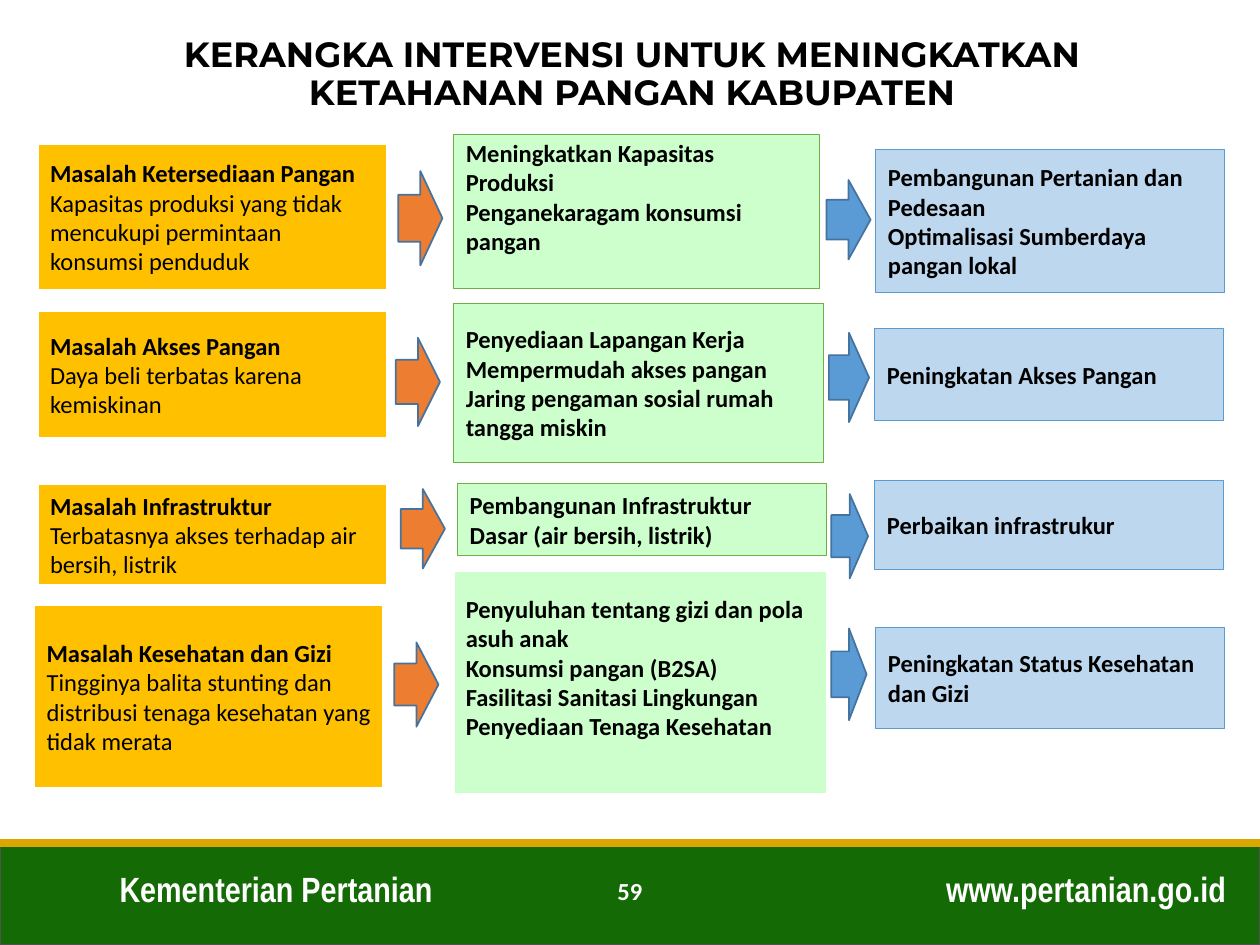
from pptx import Presentation
from pptx.dml.color import RGBColor
from pptx.enum.shapes import MSO_CONNECTOR as Connector, MSO_SHAPE as Shape
from pptx.enum.text import MSO_ANCHOR as Anchor, PP_ALIGN as Align
from pptx.oxml.ns import qn
from pptx.util import Cm, Pt
from lxml.etree import SubElement

THEME = {
    "problem": {"fill": "FFC000", "line": "FFFFFF", "width": 1.5},
    "action": {"fill": "CCFFCC", "line": "70AD47", "width": 0.5},
    "action_plain": {"fill": "CCFFCC", "line": "FFFFFF", "width": 1.5},
    "outcome": {"fill": "BDD7EE", "line": "5B9BD5", "width": 0.5},
    "to_action": {"fill": "ED7D31", "line": "43739E", "width": 1},
    "to_outcome": {"fill": "5B9BD5", "line": "43739E", "width": 1},
    "footer": {"fill": "146B05", "line": "525252", "width": 1},
    "rule": {"line": "DAA600", "width": 4.5},
    "title_text": {"name": "Montserrat", "size": Pt(20), "color": "000000"},
    "body_text": {"name": "Calibri", "size": Pt(14), "color": "000000"},
    "brand_text": {"name": "Arial Narrow", "size": Pt(20), "color": "FFFFFF"},
    "number_text": {"name": "Calibri", "size": Pt(14), "color": "FFFFFF"},
}

PAGE_WIDTH, PAGE_HEIGHT, FOOTER_TOP = 25.4, 19.05, 17

PROBLEMS = [
    ((0.76, 2.9, 7.04, 2.95), "Masalah Ketersediaan Pangan",
     "Kapasitas produksi yang tidak mencukupi permintaan konsumsi penduduk"),
    ((0.76, 6.27, 7.04, 2.57), "Masalah Akses Pangan",
     "Daya beli terbatas karena kemiskinan"),
    ((0.76, 9.75, 7.04, 2.06), "Masalah Infrastruktur",
     "Terbatasnya akses terhadap air bersih, listrik"),
    ((0.69, 12.19, 7.04, 3.71), "Masalah Kesehatan dan Gizi",
     "Tingginya balita stunting dan distribusi tenaga kesehatan yang tidak merata"),
]

ACTIONS = [
    ("action", (9.14, 2.72, 7.39, 3.1), {"vertical_anchor": Anchor.TOP, "margin_top": Cm(0.06)},
     ["Meningkatkan Kapasitas Produksi", "Penganekaragam konsumsi pangan"]),
    ("action", (9.14, 6.12, 7.47, 3.2), {},
     ["Penyediaan Lapangan Kerja", "Mempermudah akses pangan",
      "Jaring pengaman sosial rumah tangga miskin"]),
    ("action", (9.22, 9.75, 7.44, 1.45), {},
     ["Pembangunan Infrastruktur Dasar (air bersih, listrik)"]),
    ("action_plain", (9.14, 11.51, 7.54, 4.5),
     {"vertical_anchor": Anchor.TOP, "margin_top": Cm(0.46)},
     ["Penyuluhan tentang gizi dan pola asuh anak", "Konsumsi pangan (B2SA)",
      "Fasilitasi Sanitasi Lingkungan", "Penyediaan Tenaga Kesehatan"]),
]

OUTCOMES = [
    ((17.65, 3.02, 7.04, 2.87),
     ["Pembangunan Pertanian dan Pedesaan", "Optimalisasi Sumberdaya pangan lokal"]),
    ((17.63, 6.63, 7.04, 1.85), ["Peningkatan Akses Pangan"]),
    ((17.63, 9.68, 7.04, 1.8), ["Perbaikan infrastrukur"]),
    ((17.65, 12.65, 7.04, 2.03), ["Peningkatan Status Kesehatan dan Gizi"]),
]

ARROWS = {
    "to_action": [(8.03, 3.45, 0.89, 1.9), (7.98, 6.81, 0.89, 1.78),
                  (8.08, 9.86, 0.89, 1.6), (7.95, 12.95, 0.89, 1.7)],
    "to_outcome": [(16.66, 3.63, 0.89, 1.6), (16.71, 6.71, 0.81, 1.8),
                   (16.76, 9.96, 0.74, 1.7), (16.76, 12.67, 0.71, 1.85)],
}

LABELS = [
    ("title_text", (1.19, 0.33, 23.11, 2.36), Anchor.MIDDLE,
     {"alignment": Align.CENTER, "line_spacing": 0.9},
     "KERANGKA INTERVENSI UNTUK MENINGKATKAN KETAHANAN PANGAN KABUPATEN"),
    ("brand_text", (2.16, 17.37, 9.3, 1.12), Anchor.TOP,
     {"alignment": Align.LEFT}, "Kementerian Pertanian"),
    ("brand_text", (17.91, 17.37, 7.06, 1.12), Anchor.TOP,
     {"alignment": Align.RIGHT}, "www.pertanian.go.id"),
    ("number_text", (11.33, 17.53, 2.74, 1.02), Anchor.TOP,
     {"alignment": Align.CENTER}, "59"),
]


def apply(target, values):
    for name, value in values.items():
        setattr(target, name, value)


def lengths(place):
    return [Cm(value) for value in place]


def style_line(line, style):
    line.color.rgb = RGBColor.from_string(style["line"])
    line.width = Pt(style["width"])


def add_block(page, kind, style_name, place):
    style = THEME[style_name]
    box = page.shapes.add_shape(kind, *lengths(place))
    box.shadow.inherit = False
    box.fill.solid()
    box.fill.fore_color.rgb = RGBColor.from_string(style["fill"])
    style_line(box.line, style)
    return box


def write(box, lines, text_style, frame_format, para_format):
    frame = box.text_frame
    apply(frame, {"word_wrap": True, "vertical_anchor": Anchor.MIDDLE, **frame_format})
    font_format = dict(THEME[text_style])
    color = RGBColor.from_string(font_format.pop("color"))
    for index, (text, bold) in enumerate(lines):
        para = frame.add_paragraph() if index else frame.paragraphs[0]
        apply(para, {"alignment": Align.LEFT, **para_format})
        span = para.add_run()
        span.text = text
        apply(span.font, {**font_format, "bold": bold})
        span.font.color.rgb = color


def add_card(page, style_name, place, lines, frame_format):
    box = add_block(page, Shape.RECTANGLE, style_name, place)
    write(box, lines, "body_text", frame_format, {})


def add_footer(page):
    add_block(page, Shape.RECTANGLE, "footer",
              (0, FOOTER_TOP, PAGE_WIDTH, PAGE_HEIGHT - FOOTER_TOP))
    rule = page.shapes.add_connector(
        Connector.STRAIGHT, *lengths((0, FOOTER_TOP, PAGE_WIDTH, FOOTER_TOP)))
    style_line(rule.line, THEME["rule"])
    SubElement(rule.element.spPr, qn("a:effectLst"))


def main():
    deck = Presentation()
    apply(deck, {"slide_width": Cm(PAGE_WIDTH), "slide_height": Cm(PAGE_HEIGHT)})
    page = deck.slides.add_slide(deck.slide_layouts[6])
    add_footer(page)
    for text_style, place, anchor, para_format, text in LABELS:
        box = page.shapes.add_textbox(*lengths(place))
        write(box, [(text, True)], text_style, {"vertical_anchor": anchor}, para_format)
    for place, heading, detail in PROBLEMS:
        add_card(page, "problem", place, [(heading, True), (detail, False)], {})
    for style_name, places in ARROWS.items():
        for place in places:
            add_block(page, Shape.RIGHT_ARROW, style_name, place)
    for style_name, place, frame_format, texts in ACTIONS:
        add_card(page, style_name, place, [(text, True) for text in texts], frame_format)
    for place, texts in OUTCOMES:
        add_card(page, "outcome", place, [(text, True) for text in texts], {})
    deck.save("out.pptx")


if __name__ == "__main__":
    main()
